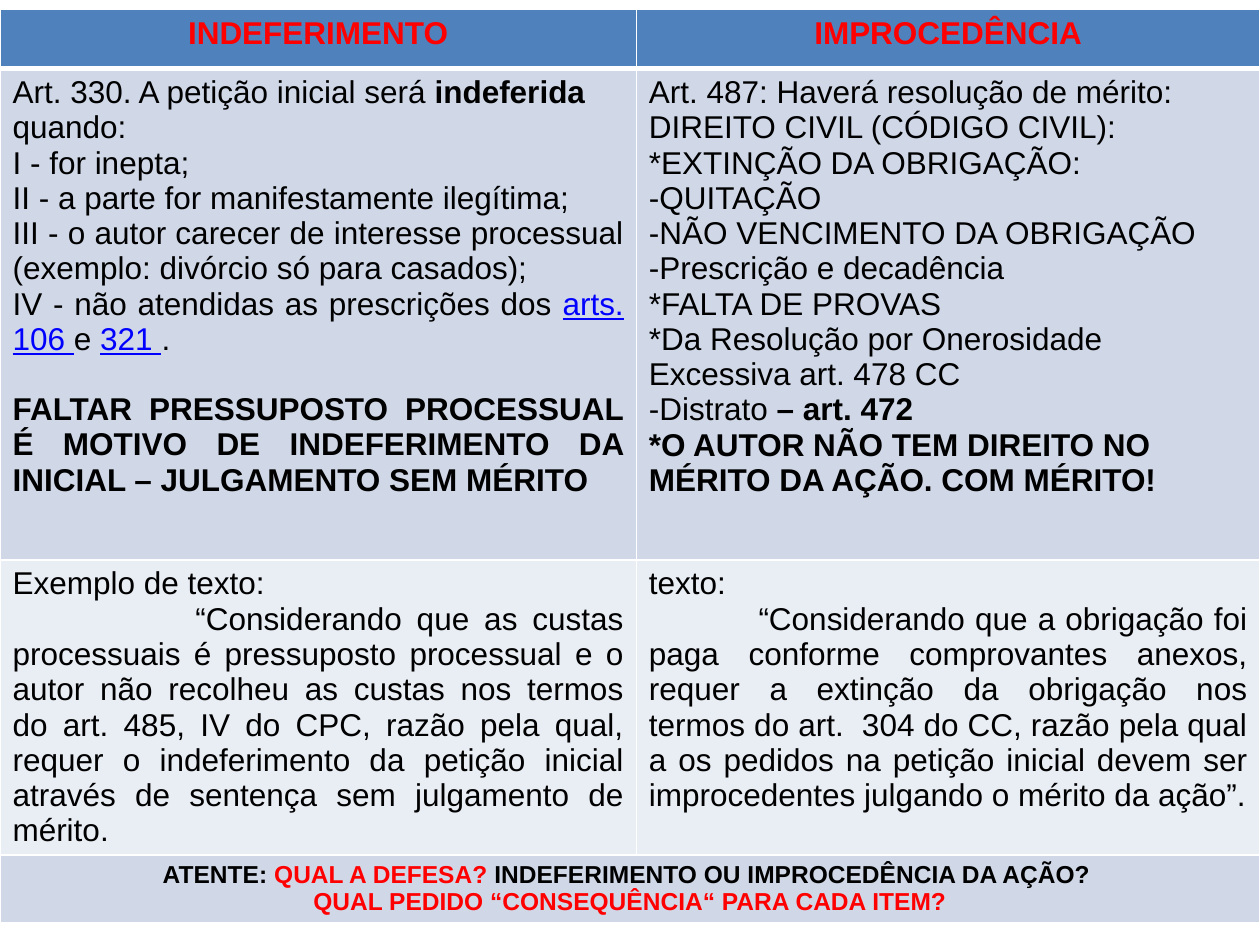
"""Build a slide comparing dismissal of a petition with rejection on the merits."""
import lxml.etree
import pptx
import pptx.dml.color
import pptx.enum.text
import pptx.oxml.ns
import pptx.util

RED = pptx.dml.color.RGBColor(0xFF, 0x00, 0x00)
BLACK = pptx.dml.color.RGBColor(0x00, 0x00, 0x00)
LINK_BLUE = pptx.dml.color.RGBColor(0x00, 0x00, 0xFF)
WHITE = pptx.dml.color.RGBColor(0xFF, 0xFF, 0xFF)
HEADER_BLUE = pptx.dml.color.RGBColor(0x4F, 0x81, 0xBD)
BAND_DARK = pptx.dml.color.RGBColor(0xD0, 0xD8, 0xE8)
BAND_LIGHT = pptx.dml.color.RGBColor(0xE9, 0xED, 0xF4)

LEFT = pptx.enum.text.PP_ALIGN.LEFT
CENTER = pptx.enum.text.PP_ALIGN.CENTER
JUSTIFY = pptx.enum.text.PP_ALIGN.JUSTIFY

PLAIN = (BLACK, False, False)
BOLD = (BLACK, True, False)
ALERT = (RED, True, False)
LINK = (LINK_BLUE, False, True)

COLUMN_SHARES = (0.505, 0.495)
ROW_INCHES = (0.47, 3.9, 2.33, 0.54)
ROW_FILLS = (HEADER_BLUE, BAND_DARK, BAND_LIGHT, BAND_DARK)


def line(*runs, align=LEFT, indent=0, before=0):
    """Describe a paragraph made of (text, style) runs."""
    return runs, align, indent, before


def plain_lines(*texts):
    """Describe one plain paragraph per text."""
    return [line((text, PLAIN)) for text in texts]


DISMISSAL_GROUNDS = [
    line(("Art. 330. A petição inicial será ", PLAIN), ("indeferida", BOLD), (" quando:", PLAIN)),
    *plain_lines("I - for inepta;", "II - a parte for manifestamente ilegítima;"),
    line(("III - o autor carecer de interesse processual (exemplo: divórcio só para casados);",
          PLAIN), align=JUSTIFY),
    line(("IV - não atendidas as prescrições dos ", PLAIN), ("arts. 106 ", LINK), ("e ", PLAIN),
         ("321 ", LINK), (".", PLAIN), align=JUSTIFY),
    line(("FALTAR PRESSUPOSTO PROCESSUAL É MOTIVO DE INDEFERIMENTO DA INICIAL – "
          "JULGAMENTO SEM MÉRITO", BOLD), align=JUSTIFY, before=20),
]
REJECTION_GROUNDS = [
    *plain_lines(
        "Art. 487: Haverá resolução de mérito:",
        "DIREITO CIVIL (CÓDIGO CIVIL):",
        "*EXTINÇÃO DA OBRIGAÇÃO:",
        "-QUITAÇÃO",
        "-NÃO VENCIMENTO DA OBRIGAÇÃO",
        "-Prescrição e decadência",
        "*FALTA DE PROVAS",
        "*Da Resolução por Onerosidade Excessiva art. 478 CC"),
    line(("-Distrato", PLAIN), (" – art. 472", BOLD)),
    line(("*O AUTOR NÃO TEM DIREITO NO MÉRITO DA AÇÃO. COM MÉRITO!", BOLD)),
]
DISMISSAL_EXAMPLE = [
    line(("Exemplo de texto:", PLAIN)),
    line(("“Considerando que as custas processuais é pressuposto processual e o autor não "
          "recolheu as custas nos termos do art. 485, IV do CPC, razão pela qual, requer o "
          "indeferimento da petição inicial através de sentença sem julgamento de mérito.",
          PLAIN), align=JUSTIFY, indent=1.45),
]
REJECTION_EXAMPLE = [
    line(("texto:", PLAIN)),
    line(("“Considerando que a obrigação foi paga conforme comprovantes anexos, requer a "
          "extinção da obrigação nos termos do art.  304 do CC, razão pela qual a os pedidos "
          "na petição inicial devem ser improcedentes julgando o mérito da ação”.",
          PLAIN), align=JUSTIFY, indent=0.87),
]
QUESTION = [
    line(("ATENTE: ", BOLD), ("QUAL A DEFESA?", ALERT),
         (" INDEFERIMENTO OU IMPROCEDÊNCIA DA AÇÃO? ", BOLD), align=CENTER),
    line(("QUAL PEDIDO “CONSEQUÊNCIA“ PARA CADA ITEM?", ALERT), align=CENTER),
]
ROWS = (
    ([line(("INDEFERIMENTO", ALERT), align=CENTER)],
     [line(("IMPROCEDÊNCIA", ALERT), align=CENTER)]),
    (DISMISSAL_GROUNDS, REJECTION_GROUNDS),
    (DISMISSAL_EXAMPLE, REJECTION_EXAMPLE),
    (QUESTION,),
)


class SlideBuilder:
    """Hold the style and the current slide."""

    font_name = "Arial"
    body_size = 18
    question_size = 14

    def __init__(self, presentation):
        self.width = presentation.slide_width
        self.height = presentation.slide_height
        self.slide = presentation.slides.add_slide(presentation.slide_layouts[6])

    def add_comparison(self, top_share):
        """Add the table that fills the slide's width."""
        frame = self.slide.shapes.add_table(
            len(ROWS), len(COLUMN_SHARES), 0, int(self.height * top_share),
            self.width, pptx.util.Inches(sum(ROW_INCHES)))
        table = frame.table
        for column, share in zip(table.columns, COLUMN_SHARES):
            column.width = int(self.width * share)
        for row, height in zip(table.rows, ROW_INCHES):
            row.height = pptx.util.Inches(height)
        last = len(ROWS) - 1
        table.cell(last, 0).merge(table.cell(last, 1))
        for row_index, fill in enumerate(ROW_FILLS):
            for column_index in range(len(COLUMN_SHARES)):
                cell = table.cell(row_index, column_index)
                self.set_borders(cell, top=3 if row_index == 1 else 1,
                                 bottom=3 if row_index == 0 else 1)
                cell.fill.solid()
                cell.fill.fore_color.rgb = fill
            size = self.question_size if row_index == last else self.body_size
            for column_index, lines in enumerate(ROWS[row_index]):
                self.add_lines(table.cell(row_index, column_index).text_frame, lines, size)

    def set_borders(self, cell, top, bottom):
        """Draw white lines around a cell."""
        properties = cell._tc.get_or_add_tcPr()
        for side, width in (("L", 1), ("R", 1), ("T", top), ("B", bottom)):
            border = lxml.etree.SubElement(
                properties, pptx.oxml.ns.qn(f"a:ln{side}"), w=str(pptx.util.Pt(width)))
            fill = lxml.etree.SubElement(border, pptx.oxml.ns.qn("a:solidFill"))
            lxml.etree.SubElement(fill, pptx.oxml.ns.qn("a:srgbClr"), val=str(WHITE))

    def add_lines(self, text_frame, lines, size):
        """Fill a text frame with described paragraphs."""
        for index, (runs, align, indent, before) in enumerate(lines):
            paragraph = text_frame.add_paragraph() if index else text_frame.paragraphs[0]
            paragraph.alignment = align
            if indent:
                paragraph._p.get_or_add_pPr().set("indent", str(pptx.util.Inches(indent)))
            if before:
                paragraph.space_before = pptx.util.Pt(before)
            for text, (color, bold, underline) in runs:
                run = paragraph.add_run()
                run.text = text
                run.font.name = self.font_name
                run.font.size = pptx.util.Pt(size)
                run.font.color.rgb = color
                run.font.bold = bold
                run.font.underline = underline


def main():
    """Create and save the presentation."""
    presentation = pptx.Presentation()
    presentation.slide_width = pptx.util.Inches(10)
    presentation.slide_height = pptx.util.Inches(7.5)
    SlideBuilder(presentation).add_comparison(top_share=0.01)
    presentation.save("out.pptx")


if __name__ == "__main__":
    main()
